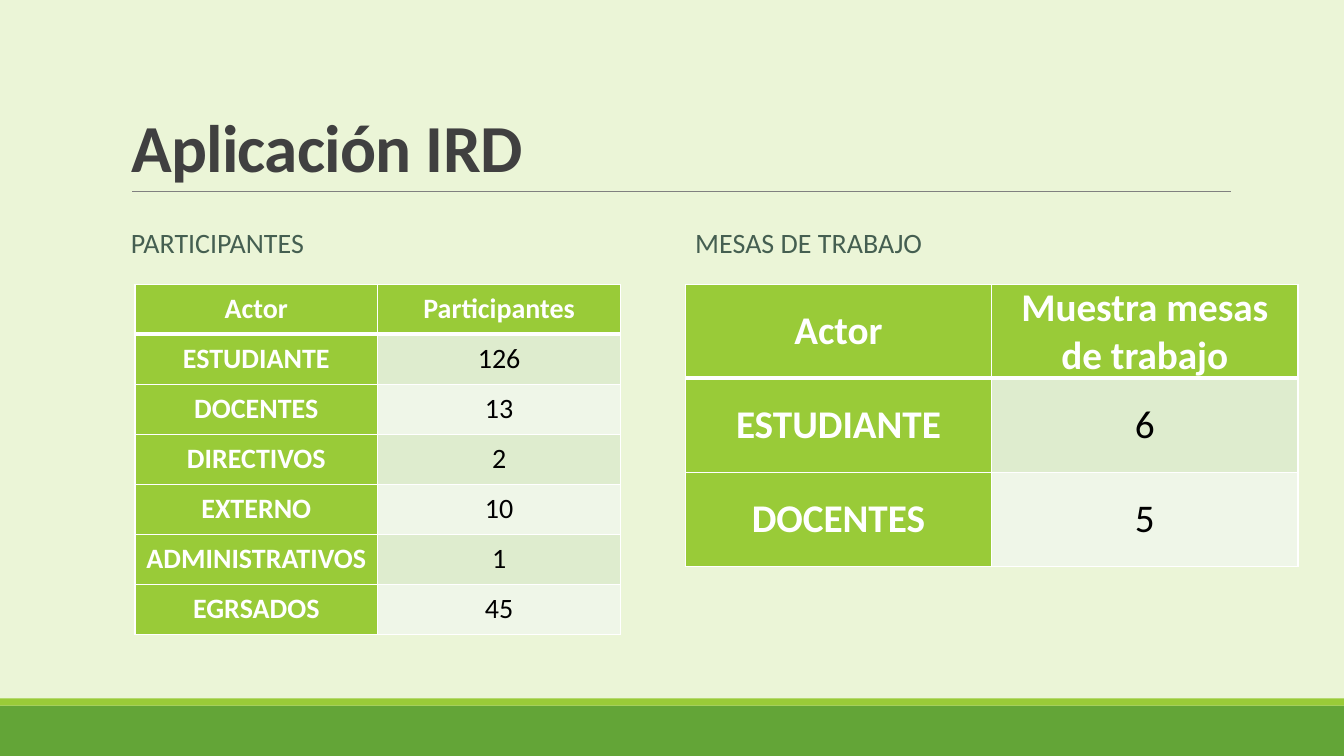
from lxml import etree
from pptx import Presentation
from pptx.dml.color import RGBColor
from pptx.enum.shapes import MSO_CONNECTOR, MSO_SHAPE
from pptx.enum.text import MSO_ANCHOR as ANCHOR, MSO_AUTO_SIZE, PP_ALIGN as ALIGN
from pptx.oxml.ns import qn
from pptx.util import Cm, Pt

FONT = "Calibri"
WHITE, BLACK = "FFFFFF", "000000"
LIME, GREEN = "99CB38", "63A537"
BANDS = "DEECCE", "EFF6E8"
SLIDE_W, SLIDE_H = 33.87, 19.05
LEFT, RIGHT = 3.05, 17.27
TABLE_TOP = 7.16

PARTICIPANTS = [
    ("Actor", "Participantes"),
    ("ESTUDIANTE", "126"),
    ("DOCENTES", "13"),
    ("DIRECTIVOS", "2"),
    ("EXTERNO", "10"),
    ("ADMINISTRATIVOS", "1"),
    ("EGRSADOS", "45"),
]
WORK_TABLES = [
    ("Actor", "Muestra mesas de trabajo"),
    ("ESTUDIANTE", "6"),
    ("DOCENTES", "5"),
]


def paint(color_format, color):
    color_format.rgb = RGBColor.from_string(color)


def fill_solid(fill, color):
    fill.solid()
    paint(fill.fore_color, color)


def format_paragraph(p, size, color, bold=False, align=ALIGN.LEFT):
    p.alignment = align
    p.font.name, p.font.size, p.font.bold = FONT, Pt(size), bold
    paint(p.font.color, color)


def add_band(s, top, height, color):
    sp = s.shapes.add_shape(MSO_SHAPE.RECTANGLE, 0, Cm(top), Cm(SLIDE_W), Cm(height))
    sp.shadow.inherit = False
    fill_solid(sp.fill, color)
    sp.line.fill.background()


def add_rule(s, left, right, y):
    line = s.shapes.add_connector(MSO_CONNECTOR.STRAIGHT, Cm(left), Cm(y), Cm(right), Cm(y))
    line.line.width = Pt(0.5)
    paint(line.line.color, "808080")
    etree.SubElement(line._element.spPr, qn("a:effectLst"))


def set_title(s, text):
    title = s.shapes.title
    title.left, title.top, title.width, title.height = Cm(LEFT), Cm(0.79), Cm(27.94), Cm(4.04)
    tf = title.text_frame
    tf.text = text
    tf.auto_size = MSO_AUTO_SIZE.NONE
    tf.vertical_anchor = ANCHOR.BOTTOM
    p = tf.paragraphs[0]
    p.line_spacing = 0.85
    format_paragraph(p, 48, "404040", bold=True)
    p.runs[0]._r.get_or_add_rPr().set("spc", "-50")


def add_heading(s, left, text):
    tf = s.shapes.add_textbox(Cm(left), Cm(5.13), Cm(13.72), Cm(2.06)).text_frame
    tf.word_wrap = True
    tf.vertical_anchor = ANCHOR.MIDDLE
    p = tf.paragraphs[0]
    p.text = text
    p.line_spacing = 0.9
    format_paragraph(p, 20, "455F51")


def set_borders(cell, **widths):
    """Draw white cell borders, given as side=points in the order L, R, T, B."""
    tcPr = cell._tc.get_or_add_tcPr()
    for side, width in widths.items():
        ln = etree.SubElement(tcPr, qn(f"a:ln{side}"), w=str(Pt(width)))
        fill = etree.SubElement(ln, qn("a:solidFill"))
        etree.SubElement(fill, qn("a:srgbClr"), val=WHITE)


def add_table(s, left, col_width, row_height, size, rows):
    n_rows, n_cols = len(rows), len(rows[0])
    table = s.shapes.add_table(n_rows, n_cols, Cm(left), Cm(TABLE_TOP),
                               Cm(col_width * n_cols), Cm(row_height * n_rows)).table
    for col in table.columns:
        col.width = Cm(col_width)
    for i, values in enumerate(rows):
        table.rows[i].height = Cm(row_height)
        for j, value in enumerate(values):
            cell = table.cell(i, j)
            is_header = i == 0 or j == 0
            set_borders(cell, L=1, R=1, T=3 if i == 1 else 1, B=3 if i == 0 else 1)
            fill_solid(cell.fill, LIME if is_header else BANDS[(i - 1) % 2])
            cell.margin_left = cell.margin_right = Cm(0.18)
            cell.margin_top = cell.margin_bottom = 0
            cell.vertical_anchor = ANCHOR.MIDDLE
            cell.text = value
            format_paragraph(cell.text_frame.paragraphs[0], size,
                             WHITE if is_header else BLACK, is_header, ALIGN.CENTER)


def main():
    prs = Presentation()
    prs.slide_width, prs.slide_height = Cm(SLIDE_W), Cm(SLIDE_H)
    s = prs.slides.add_slide(prs.slide_layouts[5])
    fill_solid(s.background.fill, "EBF5D7")
    add_band(s, 17.78, 1.27, GREEN)
    add_band(s, 17.6, 0.18, LIME)
    add_rule(s, 3.33, 31.01, 4.83)
    set_title(s, "Aplicación IRD")
    add_heading(s, LEFT, "PARTICIPANTES")
    add_table(s, 3.4, 6.12, 1.26, 20, PARTICIPANTS)
    add_heading(s, RIGHT, "MESAS DE TRABAJO")
    add_table(s, RIGHT, 7.72, 2.37, 28, WORK_TABLES)
    prs.save("out.pptx")


if __name__ == "__main__":
    main()
